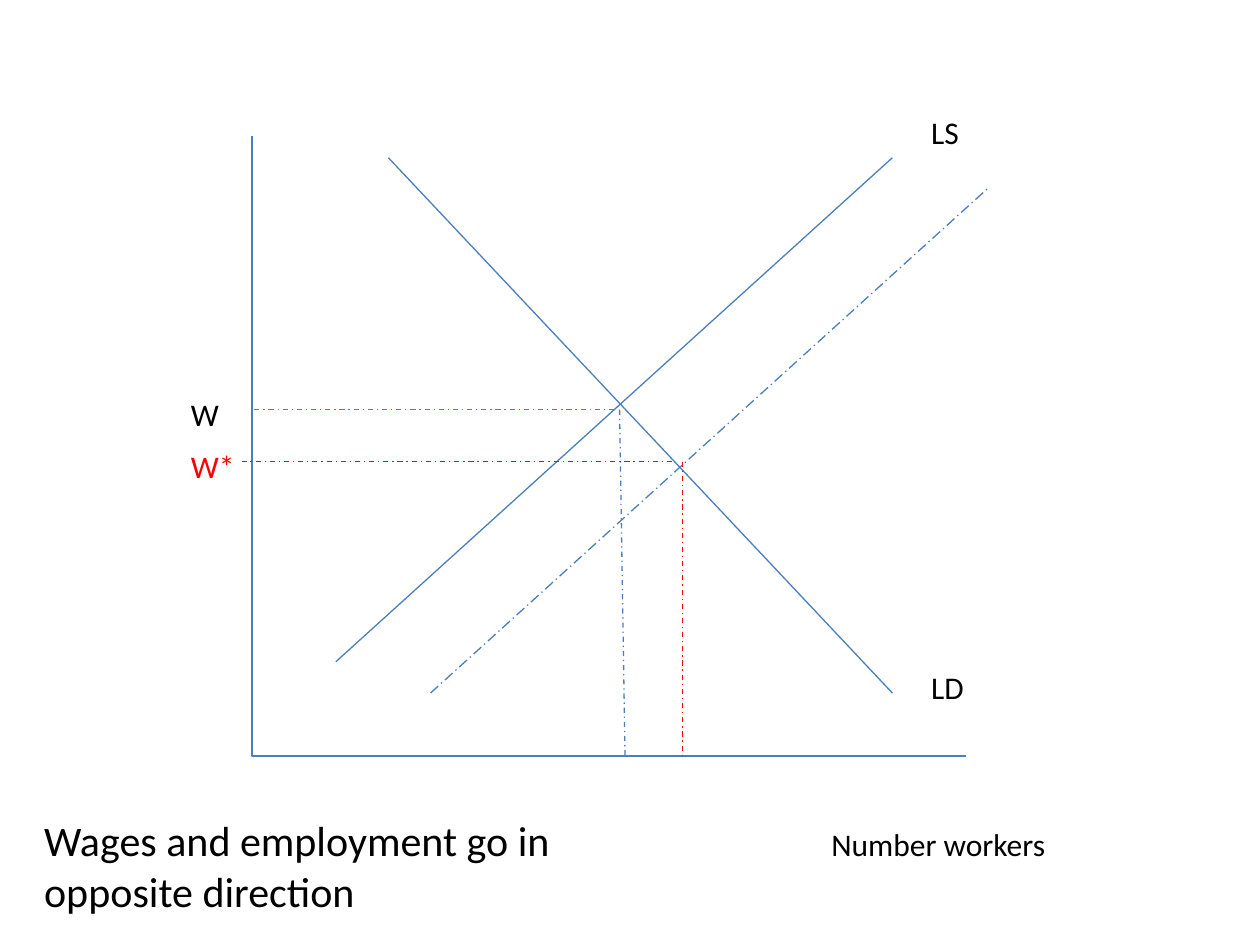
from lxml.etree import SubElement
from pptx import Presentation
from pptx.dml.color import RGBColor
from pptx.enum.dml import MSO_LINE as Dash
from pptx.enum.shapes import MSO_CONNECTOR as Conn
from pptx.enum.text import MSO_AUTO_SIZE as Fit
from pptx.oxml.ns import qn
from pptx.util import Cm, Pt

BLUE = RGBColor(0x4B, 0x7E, 0xBC)
RED = RGBColor(0xFF, 0x00, 0x00)
BLACK = RGBColor(0x00, 0x00, 0x00)


class Sketch:
    """Holds the slide and the shared style."""
    font = "Calibri"
    width = Pt(0.75)

    def __init__(self, slide):
        self.shapes = slide.shapes

    def line(self, start, end, color=BLUE, dash=None, kind=Conn.STRAIGHT):
        ends = [Cm(n) for n in (*start, *end)]
        line = self.shapes.add_connector(kind, *ends)
        line.line.color.rgb = color
        line.line.width = self.width
        if dash:
            line.line.dash_style = dash
        SubElement(line._element.spPr, qn("a:effectLst"))
        return line

    def axes(self, top, end):
        # The bend sits at the left edge, so one elbow draws both axes
        elbow = self.line(top, end, kind=Conn.ELBOW)
        guides = elbow._element.spPr.find(qn("a:prstGeom")).find(qn("a:avLst"))
        SubElement(guides, qn("a:gd"), name="adj1", fmla="val 0")

    def text(self, words, left, top, width, height=1.02, size=18, color=BLACK):
        box = self.shapes.add_textbox(Cm(left), Cm(top), Cm(width), Cm(height))
        frame = box.text_frame
        frame.text = words
        frame.word_wrap = True
        frame.auto_size = Fit.SHAPE_TO_FIT_TEXT
        font = frame.paragraphs[0].runs[0].font
        font.name, font.size = self.font, Pt(size)
        font.color.rgb = color


def main():
    deck = Presentation()
    deck.slide_width, deck.slide_height = Cm(25.4), Cm(19.05)
    draw = Sketch(deck.slides.add_slide(deck.slide_layouts[6]))

    # Axes
    left, base = 5.08, 15.24
    draw.axes((left, 2.75), (19.47, base))

    # Supply and demand
    low, high = (6.77, 13.34), (17.99, 3.18)
    draw.line(low, high)
    draw.line((7.83, 3.18), (17.99, 13.97))

    # First wage and employment
    wage = 8.26
    draw.line((12.38, wage), (left, wage), dash=Dash.DASH_DOT)
    draw.line((12.49, wage), (12.6, base), dash=Dash.DASH_DOT)

    # New wage and employment
    wage, jobs = 9.31, 13.76
    draw.line((13.55, wage), (4.87, wage), RED, Dash.DASH_DOT)
    draw.line((jobs, wage), (jobs, base), RED, Dash.DASH_DOT)

    # Supply shifted right
    ends = [(x + 1.91, y + 0.63) for x, y in (low, high)]
    draw.line(*ends, dash=Dash.LONG_DASH_DOT)

    # Labels
    draw.text("W", 3.6, 7.83, 1.07)
    draw.text("W*", 3.6, 8.89, 2.33, color=RED)
    draw.text("LS", 18.52, 2.16, 1.91)
    draw.text("LD", 18.52, 13.34, 1.91)
    draw.text("Number workers", 16.51, 16.51, 6.78)

    # Conclusion
    draw.text("Wages and employment go in opposite direction",
              0.64, 16.3, 11.64, 2.31, size=24)

    deck.save("out.pptx")


if __name__ == "__main__":
    main()
